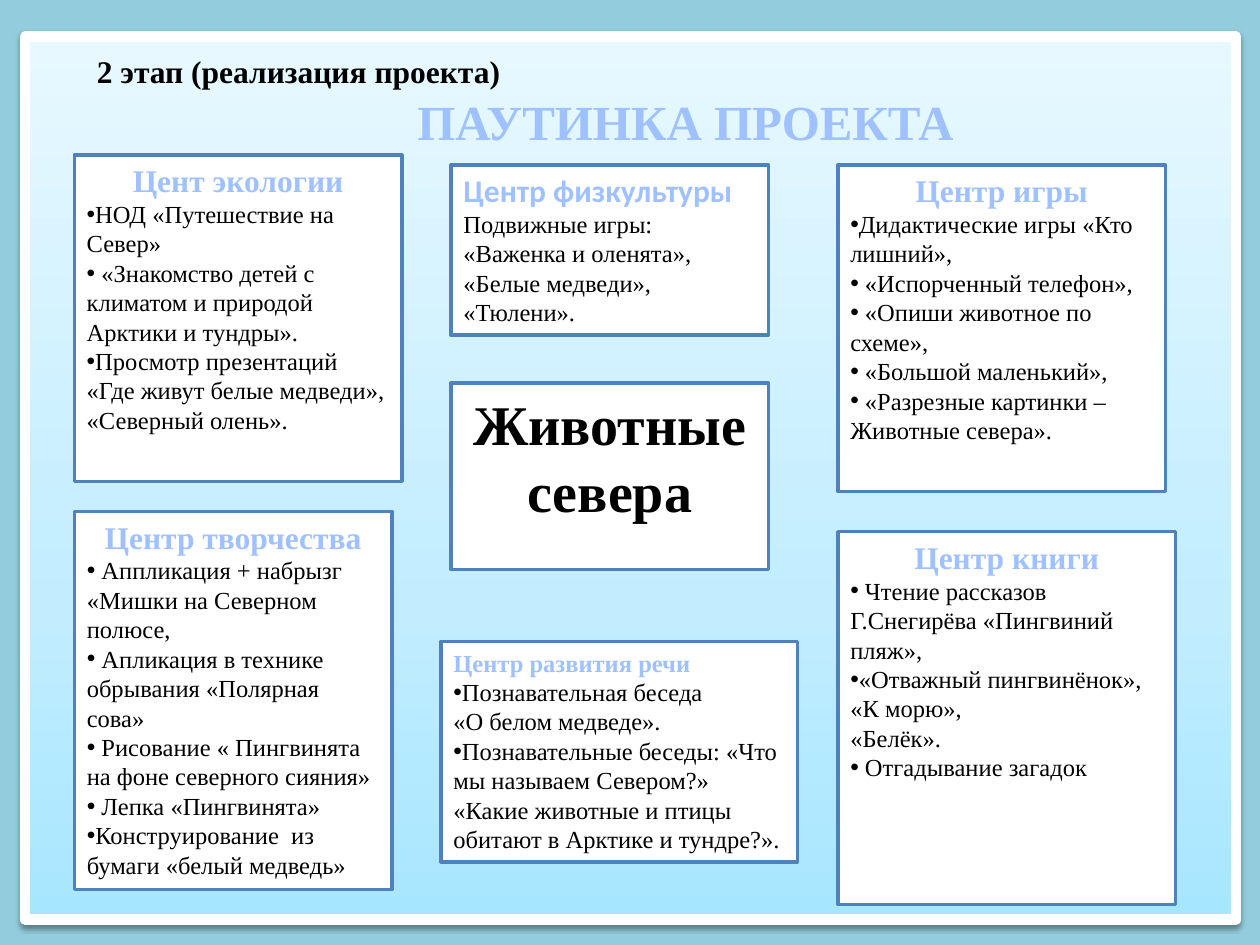
"""Build the project web slide about animals of the north."""
import pptx
import pptx.util
import pptx.dml.color
import pptx.enum.shapes
import pptx.enum.text
import pptx.oxml
import pptx.oxml.ns
import lxml.etree

Inches = pptx.util.Inches
Pt = pptx.util.Pt
RGB = pptx.dml.color.RGBColor
RECT = pptx.enum.shapes.MSO_SHAPE.RECTANGLE
ALIGN = pptx.enum.text.PP_ALIGN
SERIF = "Times New Roman"
BLACK = RGB(0, 0, 0)
WHITE = RGB(0xFF, 0xFF, 0xFF)
TEAL = RGB(0x93, 0xCD, 0xDD)
BLUE = RGB(0x4F, 0x81, 0xBD)
PALE = RGB(0xA0, 0xC1, 0xFF)
SKY = [(0, RGB(0xA7, 0xE6, 0xFF)), (35, RGB(0xC1, 0xED, 0xFF)), (100, RGB(0xE7, 0xF8, 0xFF))]
NS = pptx.oxml.ns.nsdecls("a")
qn = pptx.oxml.ns.qn


def write(para, text, size=14, bold=False, color=BLACK, font=SERIF, align=ALIGN.LEFT, bullet=False):
    """Fill a paragraph with one formatted run."""
    para.alignment = align
    run = para.add_run()
    run.text = text
    run.font.size = Pt(size)
    run.font.bold = bold
    run.font.name = font
    run.font.color.rgb = color
    if bullet:
        props = para._p.get_or_add_pPr()
        lxml.etree.SubElement(props, qn("a:buFont"), typeface="Arial")
        lxml.etree.SubElement(props, qn("a:buChar"), char="•")


def box(left, top, width, height):
    """Add a white bordered box and return its text frame."""
    shape = slide.shapes.add_shape(RECT, Inches(left), Inches(top), Inches(width), Inches(height))
    shape.shadow.inherit = False
    shape.fill.solid()
    shape.fill.fore_color.rgb = WHITE
    shape.line.color.rgb = BLUE
    shape.line.width = Pt(2)
    frame = shape.text_frame
    frame.word_wrap = True
    frame.vertical_anchor = pptx.enum.text.MSO_ANCHOR.TOP
    return frame


deck = pptx.Presentation()
deck.slide_width = Inches(10)
deck.slide_height = Inches(7.5)
slide = deck.slides.add_slide(deck.slide_layouts[5])
slide.background.fill.solid()
slide.background.fill.fore_color.rgb = TEAL

panel = slide.shapes.add_shape(RECT, Inches(0.2), Inches(0.29), Inches(9.61), Inches(7.01))
panel.line.color.rgb = WHITE
panel.line.width = Pt(6)
panel.fill.gradient()
panel.fill.gradient_angle = 90
stops = panel._element.spPr.find(".//" + qn("a:gsLst"))
for stop in list(stops):
    stops.remove(stop)
for place, color in SKY:
    stop = lxml.etree.SubElement(stops, qn("a:gs"), pos=str(place * 1000))
    lxml.etree.SubElement(stop, qn("a:srgbClr"), val=str(color))
panel._element.spPr.append(pptx.oxml.parse_xml(
    f'<a:effectLst {NS}><a:outerShdw blurRad="{Pt(3.1)}" dist="{Pt(1.6)}" dir="5400000" '
    'rotWithShape="0"><a:srgbClr val="000000"><a:alpha val="38000"/></a:srgbClr>'
    '</a:outerShdw></a:effectLst>'))
slide.shapes._spTree.insert(2, panel._element)

title = slide.shapes.title
title.left, title.top = Inches(2.17), Inches(0.68)
title.width, title.height = Inches(6.54), Inches(0.57)
title.text_frame.auto_size = pptx.enum.text.MSO_AUTO_SIZE.NONE
title.text_frame.vertical_anchor = pptx.enum.text.MSO_ANCHOR.TOP
write(title.text_frame.paragraphs[0], "ПАУТИНКА ПРОЕКТА", size=28, bold=True, color=PALE, align=ALIGN.CENTER)

stage = slide.shapes.add_textbox(Inches(0.67), Inches(0.36), Inches(4.49), Inches(0.71))
stage.text_frame.word_wrap = True
write(stage.text_frame.paragraphs[0], "2 этап (реализация проекта)", size=18, bold=True)

theme = box(3.58, 3.04, 2.52, 1.48)
write(theme.paragraphs[0], "Животные севера", size=32, bold=True, align=ALIGN.CENTER)

MID = {"size": 18, "align": ALIGN.CENTER}
cards = [
    ((3.5, 5.09, 2.83, 1.75), "Центр развития речи", {"size": 14}, [
        "•Познавательная беседа",
        "«О белом медведе».",
        "•Познавательные беседы: «Что мы называем Севером?»",
        "«Какие животные и птицы обитают в Арктике и тундре?».",
    ]),
    ((0.59, 1.23, 2.6, 2.59), "Цент экологии", MID, [
        "•НОД «Путешествие на Север»",
        "• «Знакомство детей с климатом и природой Арктики и тундры».",
        "•Просмотр презентаций «Где живут белые медведи», «Северный олень».",
    ]),
    ((6.65, 4.22, 2.68, 2.96), "Центр книги", MID, [
        "• Чтение рассказов Г.Снегирёва «Пингвиний пляж»,",
        "•«Отважный пингвинёнок»,",
        "«К морю»,",
        "«Белёк».",
        "• Отгадывание загадок",
    ]),
    ((0.59, 4.06, 2.52, 3), "Центр творчества", MID, [
        "• Аппликация + набрызг «Мишки на Северном полюсе,",
        "• Апликация в технике обрывания «Полярная сова»",
        "• Рисование « Пингвинята на фоне северного сияния»",
        "• Лепка «Пингвинята»",
        "•Конструирование  из бумаги «белый медведь»",
    ]),
    ((6.65, 1.31, 2.6, 2.59), "Центр игры", MID, [
        "•Дидактические игры «Кто лишний»,",
        "• «Испорченный телефон»,",
        "• «Опиши животное по схеме»,",
        "• «Большой маленький»,",
        "• «Разрезные картинки – Животные севера».",
    ]),
    ((3.58, 1.31, 2.52, 1.35), "Центр физкультуры", {"size": 18, "font": "Calibri"}, [
        "Подвижные игры: «Важенка и оленята», «Белые медведи», «Тюлени».",
    ]),
]
for place, head, style, lines in cards:
    frame = box(*place)
    write(frame.paragraphs[0], head, bold=True, color=PALE, **style)
    for line in lines:
        write(frame.add_paragraph(), line.removeprefix("•"), bullet=line.startswith("•"))

deck.save("out.pptx")
